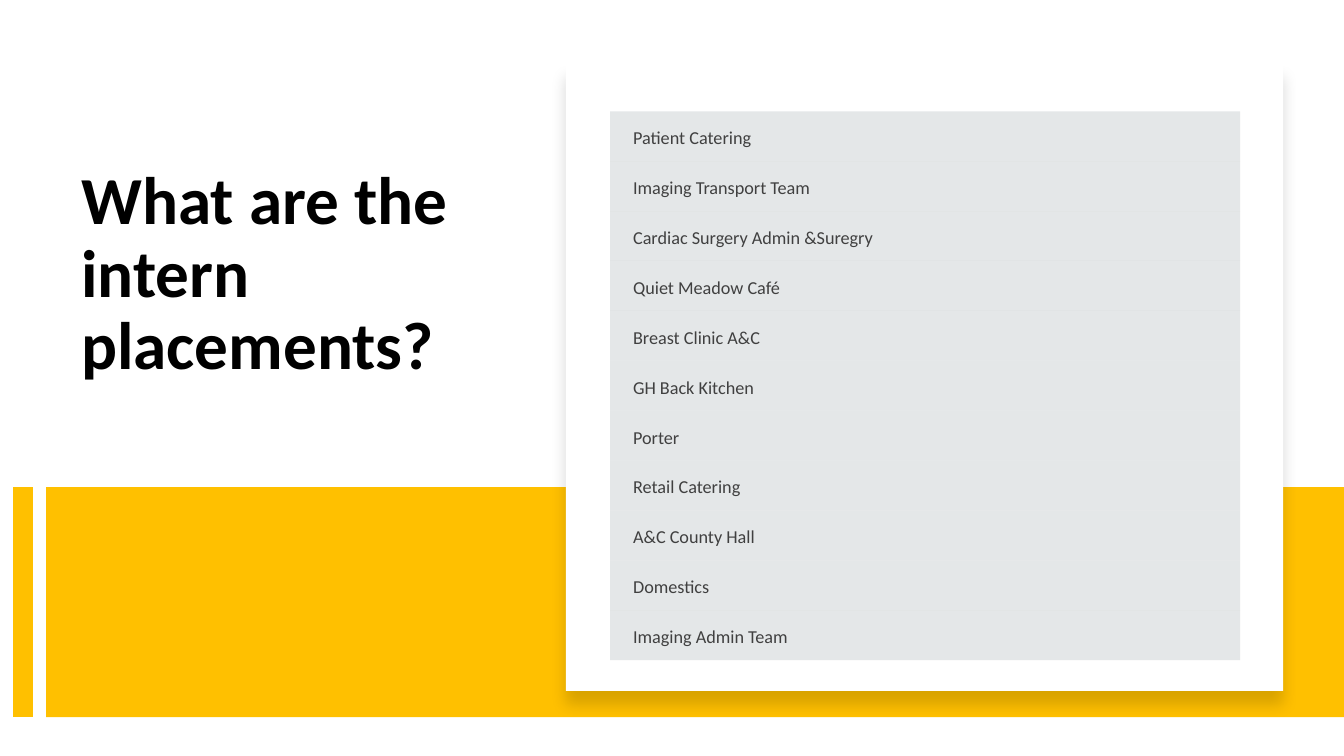
from lxml.etree import SubElement
from pptx import Presentation
from pptx.dml.color import RGBColor
from pptx.enum.shapes import MSO_CONNECTOR, MSO_SHAPE
from pptx.enum.text import MSO_ANCHOR
from pptx.oxml.ns import qn
from pptx.util import Emu, Pt

EMU_PER_PX = 9525
FONT = "Calibri"
COLORS = {
    "title": "000000",
    "accent": "FFC000",
    "card": "FFFFFF",
    "shadow": "000000",
    "cell": "B4BCBE",
    "cell_text": "404040",
}
PLACEMENTS = [
    "Patient Catering",
    "Imaging Transport Team",
    "Cardiac Surgery Admin &Suregry",
    "Quiet Meadow Café",
    "Breast Clinic A&C",
    "GH Back Kitchen",
    "Porter",
    "Retail Catering",
    "A&C County Hall",
    "Domestics",
    "Imaging Admin Team",
]
BAND_TOP, BAND_HEIGHT = 464, 219


def px(value):
    return Emu(value * EMU_PER_PX)


def color(name):
    return RGBColor.from_string(COLORS[name])


def set_alpha(color_element, percent):
    SubElement(color_element, qn("a:alpha"), val=str(percent * 1000))


def style_text(paragraph, size, color_name, bold=False):
    for run in paragraph.runs:
        run.font.name = FONT
        run.font.size = Pt(size)
        run.font.bold = bold
        run.font.color.rgb = color(color_name)


def add_title(slide, text, left, top, width, height):
    text_frame = slide.shapes.add_textbox(px(left), px(top), px(width), px(height)).text_frame
    text_frame.word_wrap = True
    text_frame.vertical_anchor = MSO_ANCHOR.TOP
    text_frame.text = text
    paragraph = text_frame.paragraphs[0]
    paragraph.line_spacing = 0.9
    style_text(paragraph, 48, "title", bold=True)


def add_rectangle(slide, color_name, left, top, width, height):
    shape = slide.shapes.add_shape(MSO_SHAPE.RECTANGLE, px(left), px(top), px(width), px(height))
    shape.shadow.inherit = False
    shape.fill.solid()
    shape.fill.fore_color.rgb = color(color_name)
    shape.line.fill.background()
    return shape


def add_drop_shadow(shape, blur, distance, opacity):
    effects = shape._element.spPr.find(qn("a:effectLst"))
    shadow = SubElement(effects, qn("a:outerShdw"), blurRad=str(Pt(blur)),
                        dist=str(Pt(distance)), dir="5400000", algn="t", rotWithShape="0")
    set_alpha(SubElement(shadow, qn("a:srgbClr"), val=COLORS["shadow"]), opacity)


def add_vertical_bar(slide, x, top, height, weight):
    bar = slide.shapes.add_connector(MSO_CONNECTOR.STRAIGHT, px(x), px(top), px(x), px(top + height))
    bar.line.color.rgb = color("accent")
    bar.line.width = Pt(weight)
    SubElement(bar._element.spPr, qn("a:effectLst"))


def fill_cell(cell, text):
    cell.fill.solid()
    cell.fill.fore_color.rgb = color("cell")
    set_alpha(cell._tc.tcPr.find(qn("a:solidFill"))[0], 35)
    cell.vertical_anchor = MSO_ANCHOR.BOTTOM
    cell.margin_left = px(22)
    cell.margin_top = cell.margin_right = cell.margin_bottom = px(11)
    cell.text_frame.text = text
    style_text(cell.text_frame.paragraphs[0], 13, "cell_text")


def add_list_table(slide, items, left, top, width, height):
    table = slide.shapes.add_table(len(items), 1, px(left), px(top), px(width), px(height)).table
    table.first_row = False
    table.horz_banding = False
    # "No Style, No Grid" keeps the cells free of borders
    table._tbl.tblPr.find(qn("a:tableStyleId")).text = "{2D5ABB26-0587-4C30-8999-92F81FD0307C}"
    for row, item in enumerate(items):
        fill_cell(table.cell(row, 0), item)


def main():
    presentation = Presentation()
    presentation.slide_width = px(1280)
    presentation.slide_height = px(720)
    slide = presentation.slides.add_slide(presentation.slide_layouts[6])

    # Title
    add_title(slide, "What are the intern placements?", 68, 154, 398, 282)

    # Yellow band and its side bar
    add_rectangle(slide, "accent", 44, BAND_TOP, 1236, BAND_HEIGHT)
    add_vertical_bar(slide, 22, BAND_TOP, BAND_HEIGHT, 14)

    # White card with the list of placements
    card = add_rectangle(slide, "card", 539, 61, 683, 597)
    add_drop_shadow(card, blur=11, distance=10, opacity=15)
    add_list_table(slide, PLACEMENTS, 581, 106, 600, 523)

    presentation.save("out.pptx")


if __name__ == "__main__":
    main()
